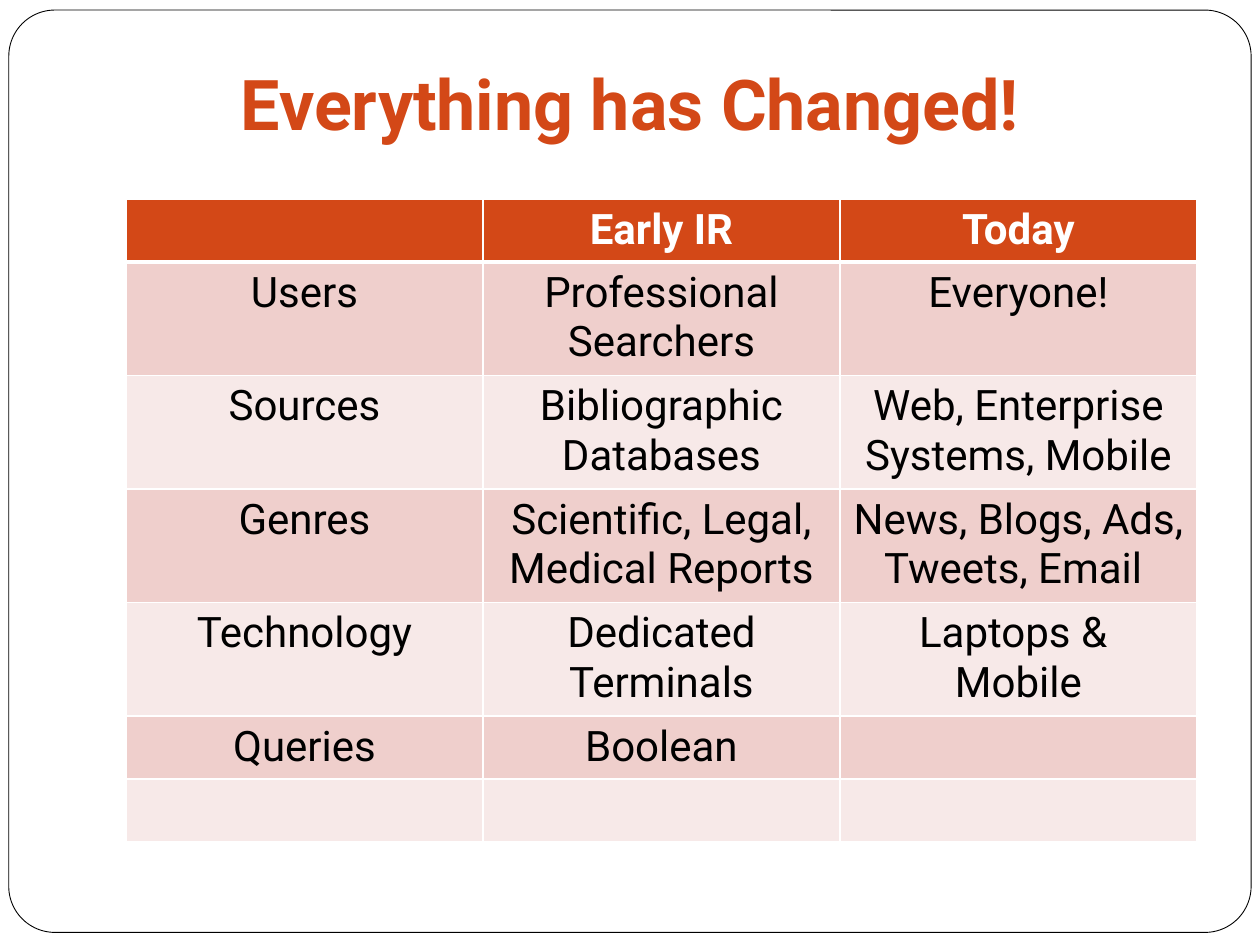
from lxml.etree import SubElement
from pptx import Presentation
from pptx.dml.color import RGBColor
from pptx.enum.shapes import MSO_SHAPE
from pptx.enum.text import MSO_ANCHOR, PP_ALIGN
from pptx.oxml.ns import qn
from pptx.util import Inches, Pt

TITLE = "Everything has Changed!"
ROWS = [
    ("", "Early IR", "Today"),
    ("Users", "Professional Searchers", "Everyone!"),
    ("Sources", "Bibliographic\nDatabases", "Web, Enterprise Systems, Mobile"),
    ("Genres", "Scientific, Legal, Medical Reports", "News, Blogs, Ads, Tweets, Email "),
    ("Technology", "Dedicated Terminals", "Laptops & \nMobile"),
    ("Queries", "Boolean", ""),
    ("", "", ""),
]
HIGH = [0.49] + [0.88] * 4 + [0.49] * 2
FONT = "Roboto"
RUST, WHITE, BLACK = "D34817", "FFFFFF", "000000"
BANDS = ["F7E9E8", "EFCFCC"]


def color(code):
    return RGBColor.from_string(code)


def paint(fill, code):
    fill.solid()
    fill.fore_color.rgb = color(code)


def write(frame, text, size, code, bold):
    for i, line in enumerate(text.split("\n")):
        para = frame.add_paragraph() if i else frame.paragraphs[0]
        para.alignment = PP_ALIGN.CENTER
        para.font.size = Pt(size)
        if line:
            run = para.add_run()
            run.text = line
            font = run.font
            font.name, font.size, font.bold = FONT, Pt(size), bold
            font.color.rgb = color(code)


def edge(cell, base):
    props = cell._tc.get_or_add_tcPr()
    for i, side in enumerate("LRTB"):
        width = base if side == "B" else 1
        line = SubElement(props, qn(f"a:ln{side}"), w=str(Pt(width)))
        fill = SubElement(line, qn("a:solidFill"))
        SubElement(fill, qn("a:srgbClr"), val=WHITE)


def main():
    deck = Presentation()
    deck.slide_width, deck.slide_height = Inches(10), Inches(7.5)
    slide = deck.slides.add_slide(deck.slide_layouts[6])
    shapes = slide.shapes

    frame = shapes.add_shape(MSO_SHAPE.ROUNDED_RECTANGLE, Inches(0.07),
                             Inches(0.08), Inches(9.86), Inches(7.32))
    frame.adjustments[0] = 0.05
    frame.shadow.inherit = False
    paint(frame.fill, WHITE)
    frame.line.color.rgb = color(BLACK)
    frame.line.width = Pt(0.5)

    title = shapes.add_textbox(Inches(0.75), 0, Inches(8.5), Inches(1.25)).text_frame
    title.word_wrap = True
    title.vertical_anchor = MSO_ANCHOR.BOTTOM
    title.margin_bottom = Inches(0.1)
    write(title, TITLE, 40, RUST, True)

    table = shapes.add_table(len(ROWS), len(ROWS[0]), Inches(1), Inches(1.58),
                             Inches(8.5), Inches(sum(HIGH))).table
    for r, row in enumerate(ROWS):
        table.rows[r].height = Inches(HIGH[r])
        head = r == 0
        for c, text in enumerate(row):
            cell = table.cell(r, c)
            edge(cell, 3 if head else 1)
            paint(cell.fill, RUST if head else BANDS[r % 2])
            write(cell.text_frame, text, 24, WHITE if head else BLACK, head)

    deck.save("out.pptx")


if __name__ == "__main__":
    main()
